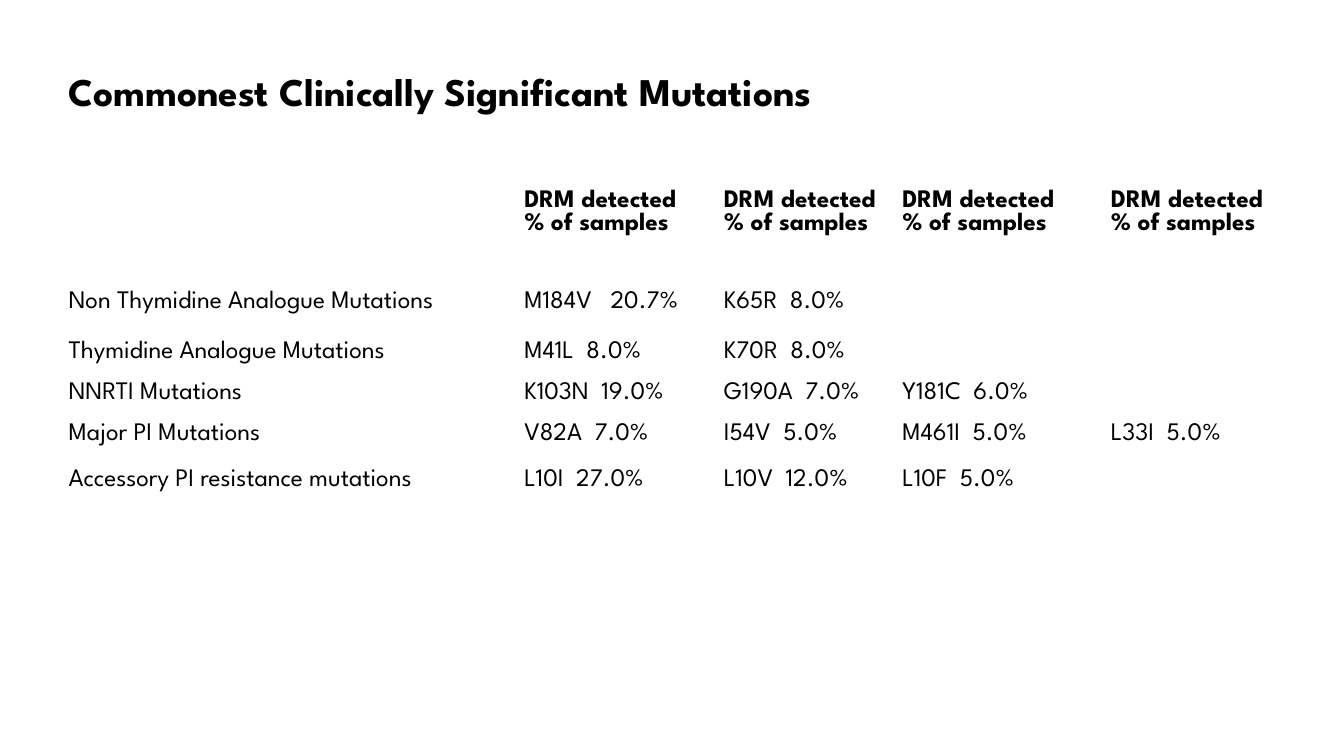
from pptx import Presentation
from pptx.dml.color import RGBColor as RGB
from pptx.util import Inches, Pt

TITLE = "Commonest Clinically Significant Mutations"
HEAD = "DRM detected\n% of samples"
ROWS = [
    ("", HEAD, HEAD, HEAD, HEAD),
    ("Non Thymidine Analogue Mutations", "M184V   20.7%", "K65R  8.0%", "", ""),
    ("Thymidine Analogue Mutations", "M41L  8.0%", "K70R  8.0%", "", ""),
    ("NNRTI Mutations", "K103N  19.0%", "G190A  7.0%", "Y181C  6.0%", ""),
    ("Major PI Mutations", "V82A  7.0%", "I54V  5.0%", "M461I  5.0%", "L33I  5.0%"),
    ("Accessory PI resistance mutations", "L10I  27.0%", "L10V  12.0%", "L10F  5.0%", ""),
]
WIDTHS = (4.52, 1.98, 1.77, 2.07, 1.77)
HEIGHTS = (1.01, 0.49, 0.41, 0.41, 0.45, 0.41)
COLORS = {"text": "000000", "cell": "FFFFFF"}
FONT = "League Spartan"
LEFT = 0.58


def write(frame, text, size, bold):
    frame.text = text
    for para in frame.paragraphs:
        font = para.font
        font.name = FONT
        font.size = Pt(size)
        font.bold = bold
        font.color.rgb = RGB.from_string(COLORS["text"])


def add_title(slide):
    box = slide.shapes.add_textbox(Inches(LEFT), Inches(0.52), Inches(12.75), Inches(3.74))
    frame = box.text_frame
    frame.word_wrap = True
    frame.margin_top = Inches(0.15)
    write(frame, TITLE, 28, True)


def add_grid(slide):
    shape = slide.shapes.add_table(
        len(ROWS), len(WIDTHS), Inches(LEFT), Inches(1.83),
        Inches(sum(WIDTHS)), Inches(sum(HEIGHTS)))
    table = shape.table
    table.first_row = False
    table.horz_banding = False
    for col, width in zip(table.columns, WIDTHS):
        col.width = Inches(width)
    for i, (row, height) in enumerate(zip(table.rows, HEIGHTS)):
        row.height = Inches(height)
        for cell, text in zip(row.cells, ROWS[i]):
            cell.fill.solid()
            cell.fill.fore_color.rgb = RGB.from_string(COLORS["cell"])
            write(cell.text_frame, text, 18, i == 0)


def main():
    prs = Presentation()
    prs.slide_width = Inches(13.33)
    prs.slide_height = Inches(7.5)
    slide = prs.slides.add_slide(prs.slide_layouts[6])
    add_title(slide)
    add_grid(slide)
    prs.save("out.pptx")


if __name__ == "__main__":
    main()
